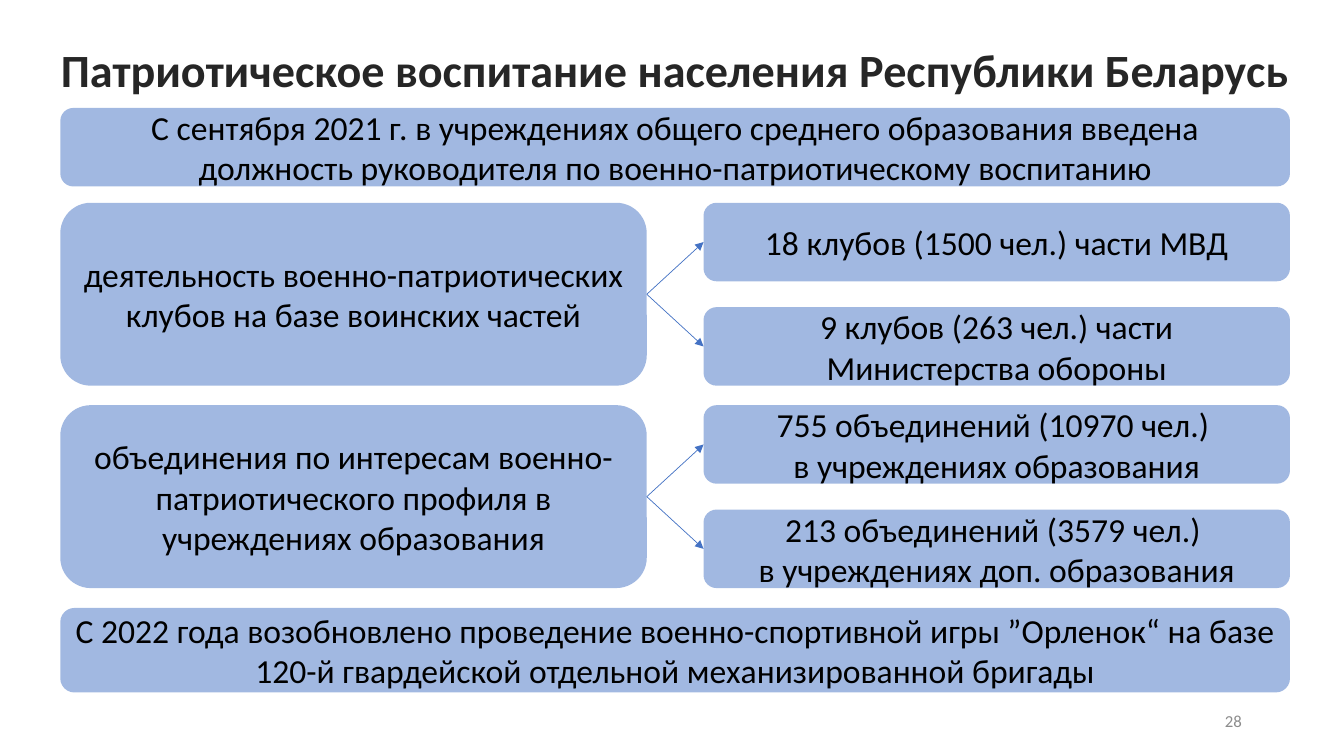
from lxml import etree
from pptx import Presentation
from pptx.dml.color import RGBColor
from pptx.enum import shapes, text
from pptx.oxml import ns
from pptx.util import Cm, Pt

ACCENT = "4472C4"
LEFT, FULL_WIDTH = 1.52, 30.99
COLUMN_WIDTH, RESULT_LEFT = 14.78, 17.73
TOPIC_TOP, TOPIC_HEIGHT, TOPIC_PITCH = 5.11, 4.61, 5.1
RESULT_HEIGHT = 1.98
LEFT_SIDE, RIGHT_SIDE = 1, 3

TOPICS = [
    ("деятельность военно-патриотических клубов на базе воинских частей",
     ["18 клубов (1500 чел.) части МВД",
      "9 клубов (263 чел.) части Министерства обороны"]),
    ("объединения по интересам военно-патриотического профиля в учреждениях образования",
     ["755 объединений (10970 чел.) \nв учреждениях образования",
      "213 объединений (3579 чел.) \nв учреждениях доп. образования"]),
]


def colour(value):
    return RGBColor.from_string(value)


def write(frame, wording, size=24, tint="000000", bold=False,
          align=text.PP_ALIGN.CENTER, spacing=1.0):
    frame.word_wrap = True
    frame.auto_size = text.MSO_AUTO_SIZE.NONE
    frame.vertical_anchor = text.MSO_ANCHOR.MIDDLE
    paragraph = frame.paragraphs[0]
    paragraph.text = wording
    paragraph.alignment = align
    paragraph.line_spacing = spacing
    for run in paragraph.runs:
        run.font.name = "Calibri"
        run.font.size = Pt(size)
        run.font.bold = bold
        run.font.color.rgb = colour(tint)


def add_card(slide, wording, left, top, width, height):
    card = slide.shapes.add_shape(
        shapes.MSO_SHAPE.ROUNDED_RECTANGLE, Cm(left), Cm(top), Cm(width), Cm(height))
    card.shadow.inherit = False
    card.fill.solid()
    card.fill.fore_color.rgb = colour(ACCENT)
    tint = card.fill._xPr.find(".//" + ns.qn("a:srgbClr"))
    etree.SubElement(tint, ns.qn("a:alpha"), val="50000")
    card.line.fill.background()
    write(card.text_frame, wording)
    return card


def add_arrow(slide, topic, result):
    arrow = slide.shapes.add_connector(shapes.MSO_CONNECTOR.STRAIGHT, 0, 0, 0, 0)
    arrow.begin_connect(topic, RIGHT_SIDE)
    arrow.end_connect(result, LEFT_SIDE)
    arrow.line.color.rgb = colour(ACCENT)
    arrow.line.width = Pt(0.5)
    etree.SubElement(arrow.line._get_or_add_ln(), ns.qn("a:tailEnd"), type="triangle")
    etree.SubElement(arrow._element.spPr, ns.qn("a:effectLst"))


def add_topic(slide, wording, results, top):
    topic = add_card(slide, wording, LEFT, top, COLUMN_WIDTH, TOPIC_HEIGHT)
    step = (TOPIC_HEIGHT - RESULT_HEIGHT) / (len(results) - 1)
    for index, result_wording in enumerate(results):
        result = add_card(slide, result_wording, RESULT_LEFT, top + index * step,
                          COLUMN_WIDTH, RESULT_HEIGHT)
        add_arrow(slide, topic, result)


def add_title(slide, wording):
    title = slide.shapes.title
    title.left, title.top, title.width, title.height = Cm(1.19), Cm(0.97), Cm(31.65), Cm(1.7)
    write(title.text_frame, wording, size=33, tint="262626", bold=True, spacing=0.9)


def add_page_number(slide, number):
    page = slide.shapes.add_textbox(Cm(23.93), Cm(17.65), Cm(7.62), Cm(1.02))
    write(page.text_frame, number, size=12, tint="8C8C8C", align=text.PP_ALIGN.RIGHT)


def main():
    deck = Presentation()
    deck.slide_width, deck.slide_height = Cm(33.87), Cm(19.05)
    slide = deck.slides.add_slide(deck.slide_layouts[5])
    add_title(slide, "Патриотическое воспитание населения Республики Беларусь")
    add_card(slide, "С сентября 2021 г. в учреждениях общего среднего образования введена "
             "должность руководителя по военно-патриотическому воспитанию",
             LEFT, 2.72, FULL_WIDTH, RESULT_HEIGHT)
    for index, (wording, results) in enumerate(TOPICS):
        add_topic(slide, wording, results, TOPIC_TOP + index * TOPIC_PITCH)
    add_card(slide, "С 2022 года возобновлено проведение военно-спортивной игры ”Орленок“ "
             "на базе 120-й гвардейской отдельной механизированной бригады",
             LEFT, 15.32, FULL_WIDTH, 2.13)
    add_page_number(slide, "28")
    deck.save("out.pptx")


if __name__ == "__main__":
    main()
